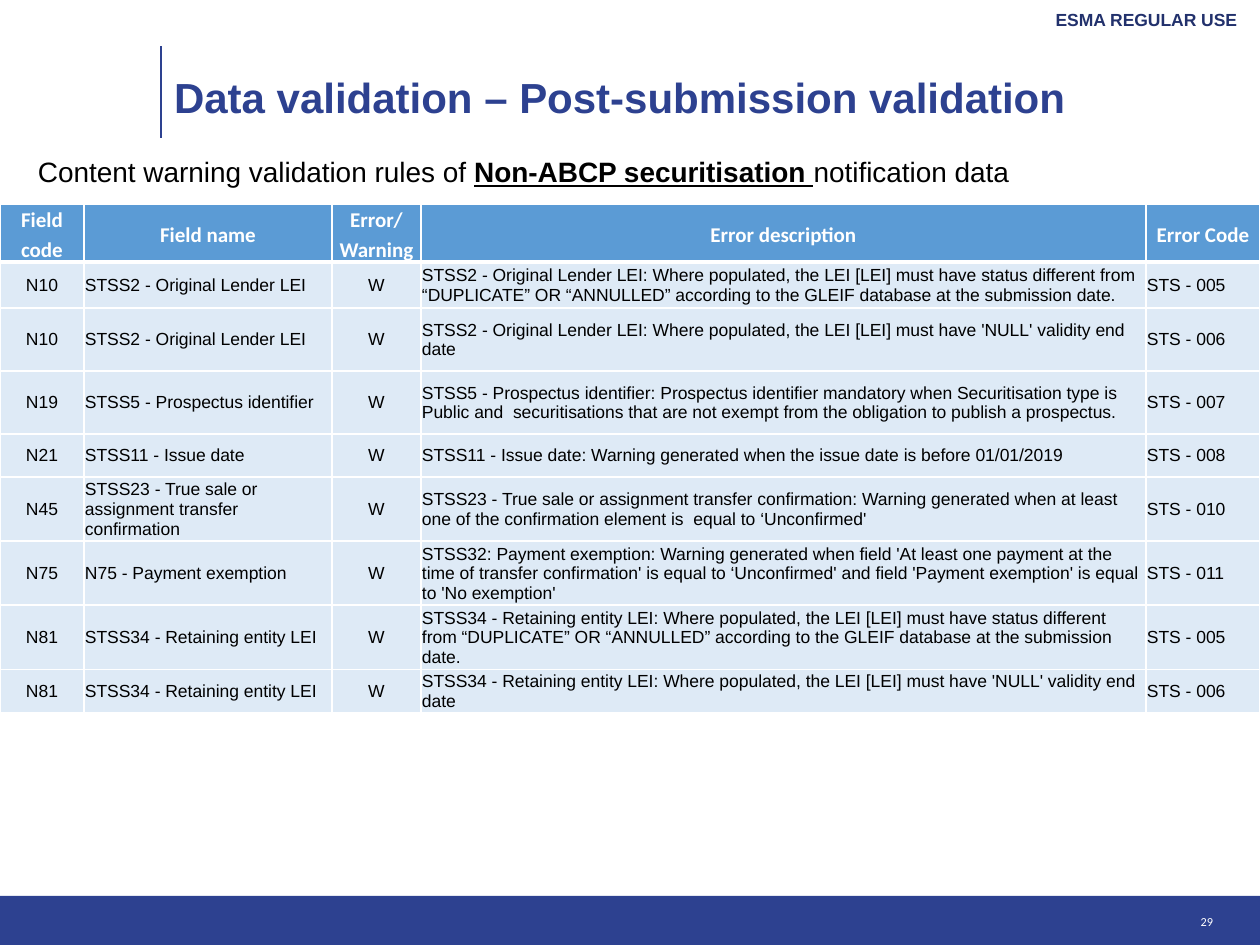
import pptx
import pptx.util
import pptx.dml.color
import pptx.enum.shapes
import pptx.enum.text
import pptx.oxml.ns
from lxml import etree

ALIGN = pptx.enum.text.PP_ALIGN
MIDDLE = pptx.enum.text.MSO_ANCHOR.MIDDLE
Pt = pptx.util.Pt
EMU = 914400 / 126
NAVY, WHITE, BLACK = "2D4190", "FFFFFF", "000000"


def rgb(code):
    return pptx.dml.color.RGBColor.from_string(code)


def write(frame, runs, size, font, color, align=ALIGN.LEFT):
    """Fill the first paragraph with (text, bold, underline) runs."""
    para = frame.paragraphs[0]
    para.alignment = align
    for text, bold, under in runs:
        run = para.add_run()
        run.text = text
        run.font.size = Pt(size)
        run.font.name = font
        run.font.bold = bold
        run.font.underline = under
        run.font.color.rgb = rgb(color)


deck = pptx.Presentation()
deck.slide_width = round(1260 * EMU)
deck.slide_height = round(945 * EMU)
slide = deck.slides.add_slide(deck.slide_layouts[6])
shapes = slide.shapes

# Footer band and title rule
band = shapes.add_shape(
    pptx.enum.shapes.MSO_SHAPE.RECTANGLE,
    0, round(896 * EMU), deck.slide_width, round(49 * EMU))
band.shadow.inherit = False
band.fill.solid()
band.fill.fore_color.rgb = rgb(NAVY)
band.line.fill.background()

rule = shapes.add_connector(
    pptx.enum.shapes.MSO_CONNECTOR.STRAIGHT,
    *[round(n * EMU) for n in (161, 138, 161, 46)])
rule.line.color.rgb = rgb(NAVY)
rule.line.width = Pt(1)
etree.SubElement(rule._element.spPr, pptx.oxml.ns.qn("a:effectLst"))

# Text boxes: place, left inset, runs, size, font, colour, alignment
boxes = [
    ((838, 9, 399, 20), 0, [("ESMA REGULAR USE", True, False)],
     10, "Arial", "22316C", ALIGN.RIGHT),
    ((0, 155, 1260, 690), 38,
     [("Content warning validation rules of ", False, False),
      ("Non-ABCP securitisation ", True, True),
      ("notification data", False, False)],
     16, "Arial", BLACK, ALIGN.LEFT),
    ((1014, 914, 199, 14), 0, [("29", False, False)],
     7, "Calibri", WHITE, ALIGN.RIGHT),
    ((174, 67, 1042, 60), 0,
     [("Data validation – Post-submission validation", True, False)],
     24, "Arial", NAVY, ALIGN.LEFT),
]
for place, inset, runs, size, font, color, align in boxes:
    box = shapes.add_textbox(*[round(n * EMU) for n in place])
    frame = box.text_frame
    frame.word_wrap = True
    frame.margin_left = round(inset * EMU)
    frame.margin_right = frame.margin_top = frame.margin_bottom = 0
    if size == 24:
        frame.vertical_anchor = MIDDLE
    write(frame, runs, size, font, color, align)

# Table of validation rules
lender = "STSS2 - Original Lender LEI"
retain = "STSS34 - Retaining entity LEI"
sale = "STSS23 - True sale or assignment transfer confirmation"
status = (": Where populated, the LEI [LEI] must have status different from "
          "“DUPLICATE” OR “ANNULLED” according to the GLEIF database at the "
          "submission date.")
expiry = ": Where populated, the LEI [LEI] must have 'NULL' validity end date"
rows = [
    ("Field code", "Field name", "Error/ Warning", "Error description",
     "Error Code"),
    ("N10", lender, "W", lender + status, "STS - 005"),
    ("N10", lender, "W", lender + expiry, "STS - 006"),
    ("N19", "STSS5 - Prospectus identifier", "W",
     "STSS5 - Prospectus identifier: Prospectus identifier mandatory when "
     "Securitisation type is Public and  securitisations that are not exempt "
     "from the obligation to publish a prospectus.", "STS - 007"),
    ("N21", "STSS11 - Issue date", "W",
     "STSS11 - Issue date: Warning generated when the issue date is before "
     "01/01/2019", "STS - 008"),
    ("N45", sale, "W",
     sale + ": Warning generated when at least one of the confirmation "
     "element is  equal to ‘Unconfirmed'", "STS - 010"),
    ("N75", "N75 - Payment exemption", "W",
     "STSS32: Payment exemption: Warning generated when field 'At least one "
     "payment at the time of transfer confirmation' is equal to ‘Unconfirmed' "
     "and field 'Payment exemption' is equal to 'No exemption'", "STS - 011"),
    ("N81", retain, "W", retain + status, "STS - 005"),
    ("N81", retain, "W", retain + expiry, "STS - 006"),
]
widths = [84, 248, 89, 725, 114]
heights = [58, 46, 63, 63, 43, 60, 60, 60, 40]
place = (0, 204, sum(widths), sum(heights))
table = shapes.add_table(
    len(rows), len(widths), *[round(n * EMU) for n in place]).table
for col, width in zip(table.columns, widths):
    col.width = round(width * EMU)
for row, height in zip(table.rows, heights):
    row.height = round(height * EMU)

for r, row in enumerate(rows):
    head = r == 0
    for c, text in enumerate(row):
        cell = table.cell(r, c)
        cell.vertical_anchor = MIDDLE
        cell.margin_left = cell.margin_right = round((5 if head else 1) * EMU)
        cell.margin_top = round((0 if head else 1) * EMU)
        cell.margin_bottom = 0
        props = cell._tc.get_or_add_tcPr()
        for side in "LRTB":
            thick = (head and side == "B") or (r == 1 and side == "T")
            edge = etree.SubElement(
                props, pptx.oxml.ns.qn("a:ln" + side),
                w=str(Pt(3 if thick else 1)))
            fill = etree.SubElement(edge, pptx.oxml.ns.qn("a:solidFill"))
            etree.SubElement(fill, pptx.oxml.ns.qn("a:srgbClr"), val=WHITE)
        cell.fill.solid()
        cell.fill.fore_color.rgb = rgb("5B9BD5" if head else "DEEAF6")
        align = ALIGN.CENTER if head or c in (0, 2) else ALIGN.LEFT
        if head:
            write(cell.text_frame, [(text, True, False)], 12, "Calibri", WHITE,
                  align)
            para = cell.text_frame.paragraphs[0]
            para.line_spacing = 1.15
            para.space_after = Pt(12.5)
        else:
            write(cell.text_frame, [(text, False, False)], 10, "Arial", BLACK,
                  align)

deck.save("out.pptx")
